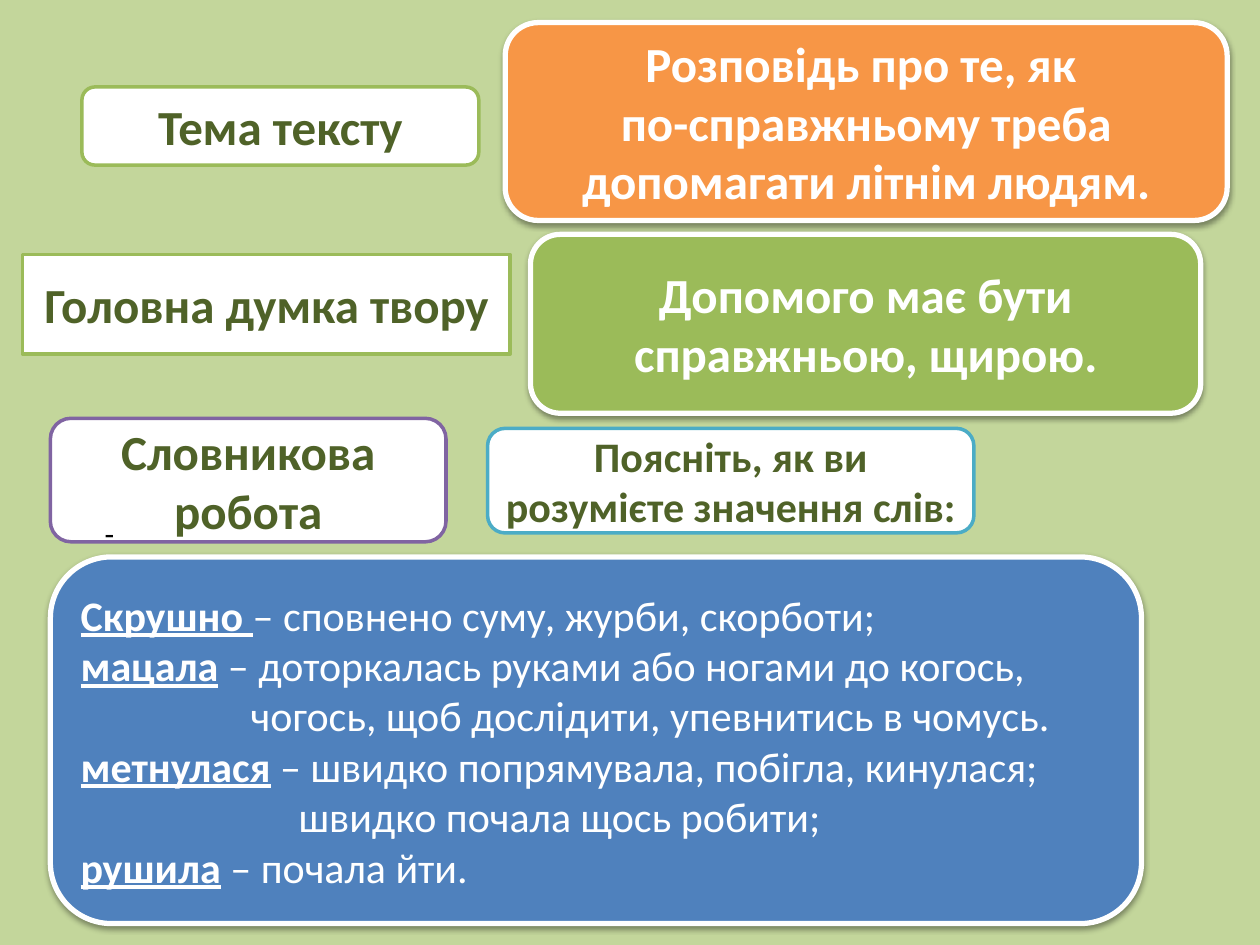
"""Build a reading-lesson slide with theme, main idea and vocabulary work."""
from lxml import etree
from pptx import Presentation
from pptx.dml.color import RGBColor
from pptx.enum.shapes import MSO_SHAPE as SHAPE
from pptx.enum.text import MSO_ANCHOR as ANCHOR, PP_ALIGN as ALIGN
from pptx.oxml import parse_xml
from pptx.oxml.ns import nsdecls, qn
from pptx.util import Inches, Pt

WHITE = RGBColor(0xFF, 0xFF, 0xFF)
BLACK = RGBColor(0, 0, 0)
BACKGROUND = RGBColor(0xC3, 0xD6, 0x9B)
DARK_GREEN = RGBColor(0x4F, 0x62, 0x28)
GREEN = RGBColor(0x9B, 0xBB, 0x59)
ORANGE = RGBColor(0xF7, 0x96, 0x46)
PURPLE = RGBColor(0x80, 0x64, 0xA2)
TEAL = RGBColor(0x4B, 0xAC, 0xC6)
BLUE = RGBColor(0x4F, 0x81, 0xBD)

SHADOW = (
    f'<a:effectLst {nsdecls("a")}><a:outerShdw blurRad="40000" dist="20000" '
    'dir="5400000" rotWithShape="0"><a:srgbClr val="000000">'
    '<a:alpha val="38000"/></a:srgbClr></a:outerShdw></a:effectLst>'
)


def add_panel(place, fill, border, preset=SHAPE.ROUNDED_RECTANGLE):
    panel = slide.shapes.add_shape(preset, *map(Inches, place))
    panel.shadow.inherit = False
    panel.fill.solid()
    panel.fill.fore_color.rgb = fill
    panel.line.color.rgb = border
    panel.line.width = Pt(2)
    if fill != WHITE:
        panel.line.width = Pt(3)
        effects = panel._element.spPr.find(qn("a:effectLst"))
        effects.getparent().replace(effects, parse_xml(SHADOW))
    panel.text_frame.word_wrap = True
    panel.text_frame.vertical_anchor = ANCHOR.MIDDLE
    return panel.text_frame


def style(paragraph, size, color, align=ALIGN.LEFT):
    paragraph.alignment = align
    paragraph.font.name = "Calibri"
    paragraph.font.size = Pt(size)
    paragraph.font.color.rgb = color


deck = Presentation()
deck.slide_width, deck.slide_height = Inches(10), Inches(7.5)
slide = deck.slides.add_slide(deck.slide_layouts[6])
slide.background.fill.solid()
slide.background.fill.fore_color.rgb = BACKGROUND

panels = [
    ((0.18, 2.02, 3.87, 0.79), WHITE, GREEN, SHAPE.RECTANGLE, 28,
     "Головна думка твору"),
    ((4.21, 1.86, 5.32, 1.42), GREEN, WHITE, SHAPE.ROUNDED_RECTANGLE, 28,
     "Допомого має бути справжньою, щирою."),
    ((4.01, 0.18, 5.73, 1.57), ORANGE, WHITE, SHAPE.ROUNDED_RECTANGLE, 28,
     "Розповідь про те, як \nпо-справжньому треба допомагати літнім людям."),
    ((0.4, 3.32, 3.14, 0.98), WHITE, PURPLE, SHAPE.ROUNDED_RECTANGLE, 28,
     "Словникова робота"),
    ((3.87, 3.4, 3.86, 0.83), WHITE, TEAL, SHAPE.ROUNDED_RECTANGLE, 24,
     "Поясніть, як ви розумієте значення слів:"),
    ((0.65, 0.69, 3.15, 0.62), WHITE, GREEN, SHAPE.ROUNDED_RECTANGLE, 28,
     "Тема тексту"),
]
for place, fill, border, preset, size, wording in panels:
    frame = add_panel(place, fill, border, preset)
    frame.text = wording
    for paragraph in frame.paragraphs:
        style(paragraph, size, DARK_GREEN if fill == WHITE else WHITE, ALIGN.CENTER)
        paragraph.font.bold = True

glossary = [
    ("Скрушно ", "– сповнено суму, журби, скорботи;", 0),
    ("мацала", " – доторкалась руками або ногами до когось,", 0),
    ("", "чогось, щоб дослідити, упевнитись в чомусь.", 1.35),
    ("метнулася", " – швидко попрямувала, побігла, кинулася;", 0),
    ("", "швидко почала щось робити;", 1.73),
    ("рушила", " – почала йти.", 0),
]
meanings = add_panel((0.4, 4.42, 8.66, 2.91), BLUE, WHITE)
for index, (word, meaning, indent) in enumerate(glossary):
    entry = meanings.add_paragraph() if index else meanings.paragraphs[0]
    style(entry, 24, WHITE)
    entry._p.get_or_add_pPr().set("marL", str(Inches(indent)))
    if word:
        term = entry.add_run()
        term.text = word
        term.font.bold = term.font.underline = True
    entry.add_run().text = meaning

dash = slide.shapes.add_textbox(Inches(0.67), Inches(4.03), Inches(5), Inches(0.4)).text_frame
dash.word_wrap = True
dash.margin_left = Inches(0.16)
dash.text = "-"
style(dash.paragraphs[0], 18, BLACK)

deck.save("out.pptx")
